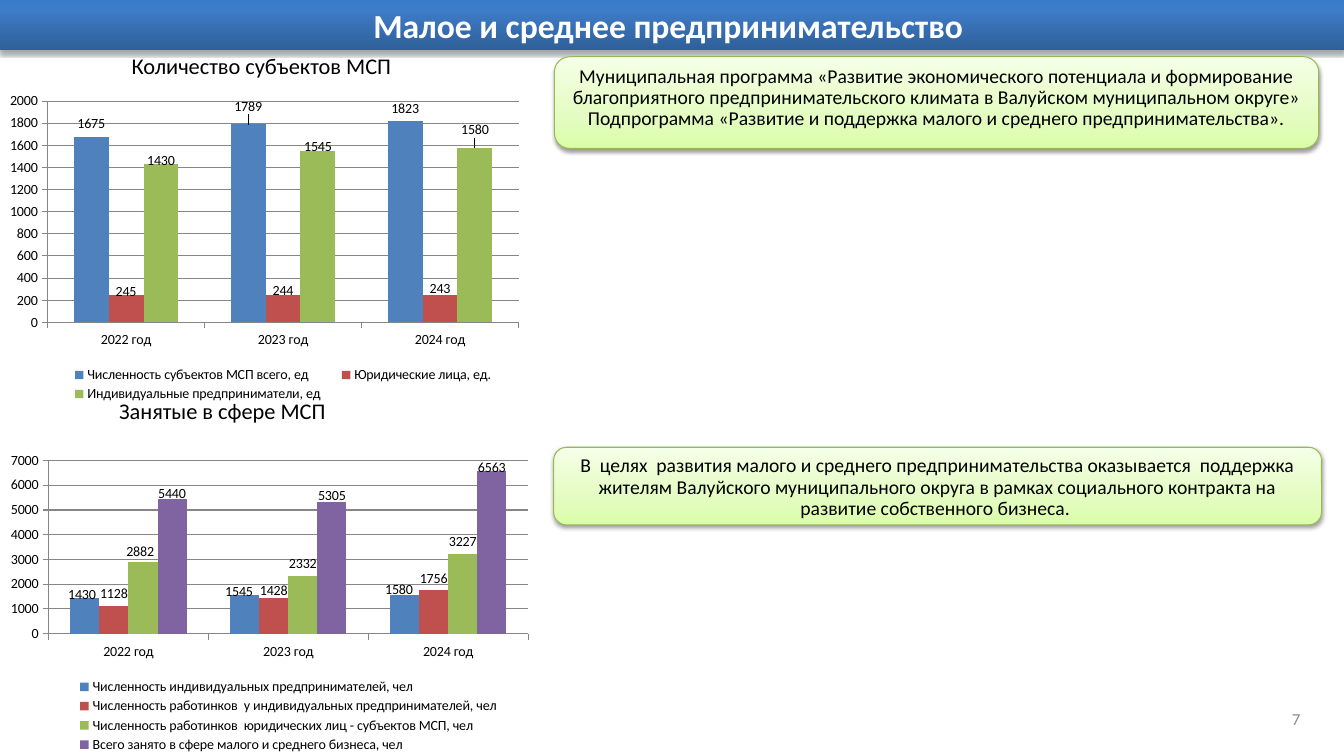
from lxml import etree
from pptx import Presentation
from pptx.chart.data import CategoryChartData
from pptx.dml.color import RGBColor
from pptx.enum.chart import XL_CHART_TYPE, XL_LABEL_POSITION, XL_LEGEND_POSITION
from pptx.enum.shapes import MSO_SHAPE
from pptx.enum.text import MSO_ANCHOR, PP_ALIGN
from pptx.oxml import parse_xml
from pptx.oxml.ns import nsdecls, qn
from pptx.util import Pt

COLUMN = XL_CHART_TYPE.COLUMN_CLUSTERED
OUTSIDE = XL_LABEL_POSITION.OUTSIDE_END
BOTTOM = XL_LEGEND_POSITION.BOTTOM
ROUND = MSO_SHAPE.ROUNDED_RECTANGLE
TOP, MIDDLE = MSO_ANCHOR.TOP, MSO_ANCHOR.MIDDLE
LEFT, CENTER, RIGHT = PP_ALIGN.LEFT, PP_ALIGN.CENTER, PP_ALIGN.RIGHT
FONT, BLACK, GRAY = "Calibri", "000000", "868686"
BLUES = [(0, "2F5F99"), (80, "3D7CC7"), (100, "3A7CCB")]
GREENS = [(0, "DAFDA7"), (35, "E4FCC2"), (100, "F5FFE7")]


def color(code):
    return RGBColor.from_string(code)


def shade(shape, stops, drop, alpha):
    """Upward gradient fill and a soft shadow below."""
    shape.fill.gradient()
    shape.fill.gradient_angle = 90
    shape.shadow.inherit = False
    props = shape._element.spPr
    ramp = props.find(".//" + qn("a:gsLst"))
    for stop in list(ramp):
        ramp.remove(stop)
    for spot, code in stops:
        stop = etree.SubElement(ramp, qn("a:gs"), pos=str(spot * 1000))
        etree.SubElement(stop, qn("a:srgbClr"), val=code)
    cast = etree.SubElement(
        props.find(qn("a:effectLst")), qn("a:outerShdw"), blurRad=str(Pt(3.1)),
        dist=str(Pt(drop)), dir="5400000", rotWithShape="0")
    ink = etree.SubElement(cast, qn("a:srgbClr"), val=BLACK)
    etree.SubElement(ink, qn("a:alpha"), val=str(alpha * 1000))


deck = Presentation()
deck.slide_width, deck.slide_height = Pt(960), Pt(540)
slide = deck.slides.add_slide(deck.slide_layouts[5])
shapes = slide.shapes

# Title band
title = shapes.title
title.left, title.top, title.width, title.height = Pt(0), Pt(0), Pt(960), Pt(36)
shade(title, BLUES, 1.8, 35)
para = title.text_frame.paragraphs[0]
para.alignment = CENTER
run = para.add_run()
run.text = "Малое и среднее предпринимательство "
run.font.name, run.font.size, run.font.bold = FONT, Pt(24), True
run.font.color.rgb = color("FFFFFF")

# Chart headings and page number
notes = [
    ("Количество субъектов МСП", 87, 34, 216, 27, 16, BLACK, LEFT, TOP),
    ("Занятые в сфере МСП", 78, 280, 216, 27, 16, BLACK, LEFT, TOP),
    ("7", 712, 499, 224, 29, 12, "8C8C8C", RIGHT, MIDDLE),
]
for text, x, y, w, h, size, code, side, anchor in notes:
    frame = shapes.add_textbox(Pt(x), Pt(y), Pt(w), Pt(h)).text_frame
    frame.word_wrap = True
    frame.vertical_anchor = anchor
    para = frame.paragraphs[0]
    para.alignment = side
    run = para.add_run()
    run.text = text
    run.font.name, run.font.size = FONT, Pt(size)
    run.font.color.rgb = color(code)

# Green panels
panels = [
    (396, 40.5, 546, 65.5, [
        "Муниципальная программа «Развитие экономического потенциала и "
        "формирование благоприятного предпринимательского климата в "
        "Валуйском муниципальном округе»",
        "Подпрограмма «Развитие и поддержка малого и среднего "
        "предпринимательства»."]),
    (395.5, 319.5, 548.5, 55.5, [
        "В  целях  развития малого и среднего предпринимательства "
        "оказывается  поддержка жителям Валуйского муниципального округа "
        "в рамках социального контракта на развитие собственного бизнеса. "]),
]
for x, y, w, h, lines in panels:
    panel = shapes.add_shape(ROUND, Pt(x), Pt(y), Pt(w), Pt(h))
    shade(panel, GREENS, 1.6, 38)
    panel.line.color.rgb = color("98B955")
    panel.line.width = Pt(0.75)
    frame = panel.text_frame
    frame.word_wrap = True
    frame.vertical_anchor = TOP
    for i, line in enumerate(lines):
        para = frame.add_paragraph() if i else frame.paragraphs[0]
        para.alignment = CENTER
        para.line_spacing = 0.9
        run = para.add_run()
        run.text = line
        run.font.name, run.font.size = FONT, Pt(14)
        run.font.color.rgb = color(BLACK)

# Charts: each series has name, colour, values and label shifts in points
charts = [
    (62, 378, 227.5, 2000, 200, (0.09, 0.045, 0.89, 0.695), (0.11, 0.87, 0.85, 0.13), [
        ("Численность субъектов МСП всего, ед", "4F81BD",
         (1675, 1789, 1823), [(0, -1), (0, -4), (0, 0)]),
        ("Юридические лица, ед.", "C0504D",
         (245, 244, 243), [(0, 6), (0, 5), (0, 4)]),
        ("Индивидуальные предприниматели, ед", "9BBB59",
         (1430, 1545, 1580), [(0, 6), (0, 5), (0, -4)]),
    ]),
    (319, 385, 221, 7000, 1000, (0.09, 0.045, 0.89, 0.56), (0.11, 0.74, 0.85, 0.26), [
        ("Численность индивидуальных предпринимателей, чел", "4F81BD",
         (1430, 1545, 1580), [(-2, 6), (-4, 6), (-4, 5)]),
        ("Численность работинков  у индивидуальных предпринимателей, чел",
         "C0504D", (1128, 1428, 1756), [(0, 0), (0, 3), (0, 0)]),
        ("Численность работинков  юридических лиц - субъектов МСП, чел",
         "9BBB59", (2882, 2332, 3227), [(-2, 1), (0, 0), (0, 0)]),
        ("Всего занято в сфере малого и среднего бизнеса, чел", "8064A2",
         (5440, 5305, 6563), [(0, 5), (0, 4), (0, 6)]),
    ]),
]
for y, w, h, peak, step, area, key, rows in charts:
    data = CategoryChartData()
    data.categories = ["2022 год", "2023 год", "2024 год"]
    for name, code, vals, moves in rows:
        data.add_series(name, vals)
    chart = shapes.add_chart(COLUMN, Pt(0), Pt(y), Pt(w), Pt(h), data).chart
    chart.has_title = False
    chart.font.name, chart.font.size = FONT, Pt(10)
    chart.font.color.rgb = color(BLACK)
    chart.has_legend = True
    chart.legend.position = BOTTOM
    chart.legend.include_in_layout = False

    # Axes and grid
    scale = chart.value_axis
    scale.minimum_scale, scale.maximum_scale, scale.major_unit = 0, peak, step
    scale.has_major_gridlines = True
    for edge in (scale.format, chart.category_axis.format, scale.major_gridlines.format):
        edge.line.color.rgb = color(GRAY)
        edge.line.width = Pt(0.75)

    # Columns and their labels; spots collects every element to be placed
    plot = chart.plots[0]
    plot.gap_width, plot.overlap, plot.vary_by_categories = 150, 0, False
    spots = []
    for series, (name, code, vals, moves) in zip(plot.series, rows):
        series.format.fill.solid()
        series.format.fill.fore_color.rgb = color(code)
        labels = series.data_labels
        labels.show_value = True
        labels.position = OUTSIDE
        for i, (dx, dy) in enumerate(moves):
            if dx or dy:
                series.points[i].data_label.position = OUTSIDE
                node = labels._element.findall(qn("c:dLbl"))[-1]
                spots.append((node.find(qn("c:idx")), {"x": dx / w, "y": dy / h}))

    # Places of plot area, legend and shifted labels
    field = chart._chartSpace.chart.plotArea
    for old in field.findall(qn("c:layout")):
        field.remove(old)
    modes = {"layoutTarget": "inner", "xMode": "edge", "yMode": "edge"}
    spots.append((field, {**modes, **dict(zip("xywh", area))}))
    modes = {"xMode": "edge", "yMode": "edge"}
    legend = chart.legend._element
    for old in legend.findall(qn("c:layout")):
        legend.remove(old)
    spots.append((legend.find(qn("c:legendPos")), {**modes, **dict(zip("xywh", key))}))
    for node, marks in spots:
        layout = parse_xml("<c:layout %s><c:manualLayout/></c:layout>" % nsdecls("c"))
        for tag, val in marks.items():
            etree.SubElement(layout[0], qn("c:" + tag), val=str(val))
        if node is field:
            field.insert(0, layout)
        else:
            node.addnext(layout)

deck.save("out.pptx")
